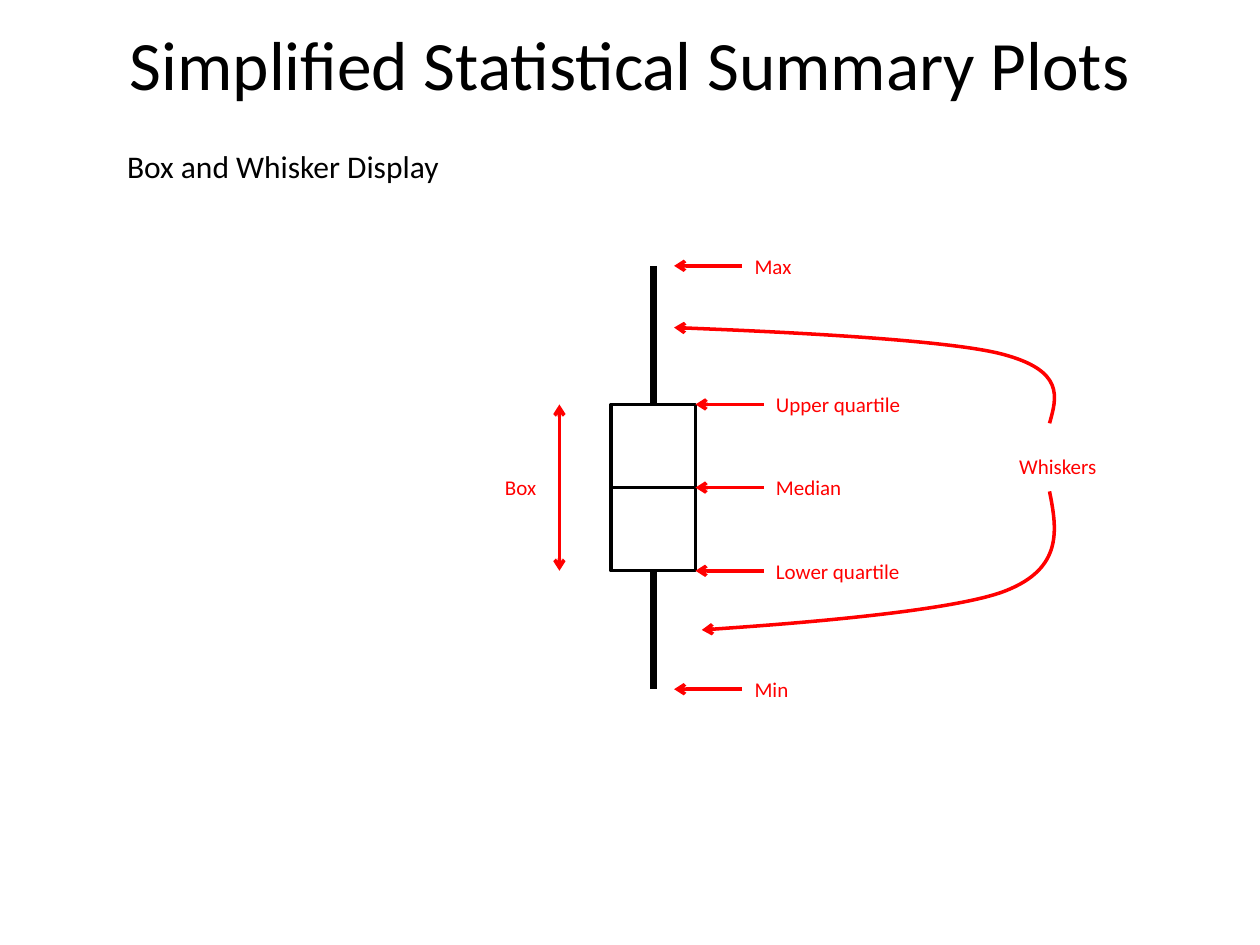
from dataclasses import dataclass

from lxml import etree
from pptx import Presentation
from pptx.dml.color import RGBColor
from pptx.enum.shapes import MSO_CONNECTOR, MSO_SHAPE
from pptx.enum.text import MSO_ANCHOR, MSO_AUTO_SIZE, PP_ALIGN
from pptx.oxml.ns import qn
from pptx.util import Inches, Pt

STRAIGHT = MSO_CONNECTOR.STRAIGHT
RECTANGLE = MSO_SHAPE.RECTANGLE
MIDDLE = MSO_ANCHOR.MIDDLE
NO_AUTOFIT = MSO_AUTO_SIZE.NONE
CENTER = PP_ALIGN.CENTER


@dataclass(frozen=True)
class Theme:
    font: str = "Calibri"
    ink: RGBColor = RGBColor(0, 0, 0)
    paper: RGBColor = RGBColor(255, 255, 255)
    note: RGBColor = RGBColor(255, 0, 0)
    title_size: float = 39.6
    subtitle_size: float = 18
    label_size: float = 12
    thin: float = 2
    thick: float = 4


THEME = Theme()

# Box plot geometry, in inches
BOX_LEFT, BOX_RIGHT = 4.85, 5.52
AXIS_X = 5.19
MAX_Y, UPPER_Y, MEDIAN_Y, LOWER_Y, MIN_Y = 2.11, 3.21, 3.87, 4.53, 5.47
WHISKER_TIP_X = 5.35
SPAN_X = 4.44
ARROW_LENGTH = 0.54
LABEL_WIDTH, LABEL_HEIGHT = 1.38, 0.3


def style_text(p, size, color):
    p.font.name = THEME.font
    p.font.size = Pt(size)
    p.font.color.rgb = color


def style_line(sp, color, width, arrows=()):
    """Format an outline; arrows names its ends, headEnd before tailEnd."""
    sp.line.color.rgb = color
    sp.line.width = Pt(width)
    ln = sp.line._get_or_add_ln()
    for end in arrows:
        etree.SubElement(ln, qn(f"a:{end}"), type="arrow")


def add_title(s, text):
    sp = s.shapes.title
    sp.left, sp.top, sp.width, sp.height = map(Inches, (0.5, -0.13, 9, 1.25))
    tf = sp.text_frame
    tf.text = text
    tf.auto_size = NO_AUTOFIT
    tf.vertical_anchor = MIDDLE
    p = tf.paragraphs[0]
    p.alignment = CENTER
    style_text(p, THEME.title_size, THEME.ink)


def add_text(s, text, left, top, width, height, size, color):
    sp = s.shapes.add_textbox(*map(Inches, (left, top, width, height)))
    tf = sp.text_frame
    tf.word_wrap = True
    tf.text = text
    style_text(tf.paragraphs[0], size, color)


def add_label(s, text, left, middle, width=LABEL_WIDTH):
    add_text(s, text, left, middle - LABEL_HEIGHT / 2, width, LABEL_HEIGHT,
             THEME.label_size, THEME.note)


def add_line(s, start, end, color, width=THEME.thin, arrows=()):
    sp = s.shapes.add_connector(STRAIGHT, *map(Inches, (*start, *end)))
    style_line(sp, color, width, arrows)
    etree.SubElement(sp._element.spPr, qn("a:effectLst"))


def add_curve_arrow(s, start, controls):
    """Draw cubic curves from start, three points for each, with an arrow at the end."""
    points = [tuple(map(Inches, point)) for point in controls]
    builder = s.shapes.build_freeform(*map(Inches, start))
    builder.add_line_segments(points, close=False)
    sp = builder.convert_to_shape()
    sp.shadow.inherit = False
    sp.fill.background()
    style_line(sp, THEME.note, THEME.thin, ["tailEnd"])

    path = sp._element.spPr.find(".//" + qn("a:path"))
    segments = path.findall(qn("a:lnTo"))
    for i in range(0, len(segments), 3):
        curve = etree.SubElement(path, qn("a:cubicBezTo"))
        for segment in segments[i:i + 3]:
            curve.append(segment[0])
            path.remove(segment)


def add_box_plot(s):
    add_line(s, (AXIS_X, MAX_Y), (AXIS_X, MIN_Y), THEME.ink, THEME.thick)
    box = s.shapes.add_shape(RECTANGLE, *map(Inches, (
        BOX_LEFT, UPPER_Y, BOX_RIGHT - BOX_LEFT, LOWER_Y - UPPER_Y)))
    box.shadow.inherit = False
    box.fill.solid()
    box.fill.fore_color.rgb = THEME.paper
    style_line(box, THEME.ink, THEME.thin)
    add_line(s, (BOX_LEFT, MEDIAN_Y), (BOX_RIGHT, MEDIAN_Y), THEME.ink)


def add_callout(s, text, tip_x, y):
    label_x = tip_x + ARROW_LENGTH
    add_line(s, (label_x, y), (tip_x, y), THEME.note, arrows=["tailEnd"])
    add_label(s, text, label_x, y)


def main():
    prs = Presentation()
    prs.slide_width, prs.slide_height = Inches(10), Inches(7.5)
    s = prs.slides.add_slide(prs.slide_layouts.get_by_name("Title Only"))

    add_title(s, "Simplified Statistical Summary Plots")
    add_text(s, "Box and Whisker Display", 0.91, 1.12, 4.28, 0.4,
             THEME.subtitle_size, THEME.ink)
    add_box_plot(s)

    for text, tip_x, y in (
        ("Max", WHISKER_TIP_X, MAX_Y),
        ("Upper quartile", BOX_RIGHT, UPPER_Y),
        ("Median", BOX_RIGHT, MEDIAN_Y),
        ("Lower quartile", BOX_RIGHT, LOWER_Y),
        ("Min", WHISKER_TIP_X, MIN_Y),
    ):
        add_callout(s, text, tip_x, y)

    add_line(s, (SPAN_X, UPPER_Y), (SPAN_X, LOWER_Y), THEME.note,
             arrows=["headEnd", "tailEnd"])
    add_label(s, "Box", 3.91, MEDIAN_Y, 0.53)

    add_label(s, "Whiskers", 7.99, 3.7)
    add_curve_arrow(s, (8.33, 3.9), [
        (8.39, 4.2), (8.44, 4.51), (7.98, 4.69),
        (7.52, 4.87), (5.57, 5), (5.57, 5)])
    add_curve_arrow(s, (8.33, 3.36), [
        (8.39, 3.15), (8.45, 2.94), (7.95, 2.81),
        (7.45, 2.68), (WHISKER_TIP_X, 2.6), (WHISKER_TIP_X, 2.6)])

    prs.save("out.pptx")


if __name__ == "__main__":
    main()
